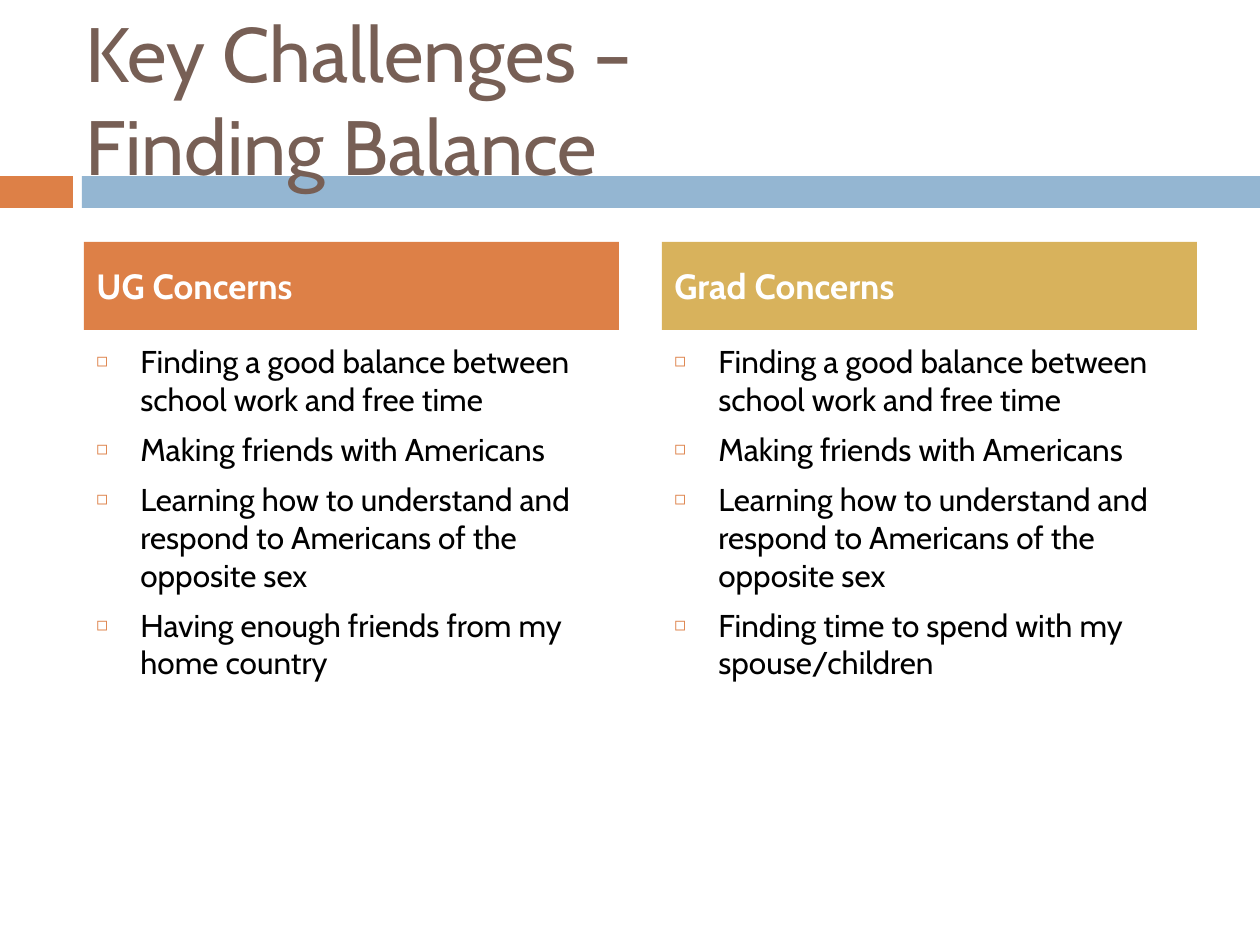
from lxml import etree
from pptx import Presentation
from pptx.dml.color import RGBColor
from pptx.enum.shapes import MSO_SHAPE
from pptx.enum.text import MSO_ANCHOR, PP_ALIGN
from pptx.oxml.ns import qn
from pptx.util import Inches, Pt

RECT = MSO_SHAPE.RECTANGLE
TOP, MIDDLE = MSO_ANCHOR.TOP, MSO_ANCHOR.MIDDLE
LEFT = PP_ALIGN.LEFT

ORANGE = RGBColor(0xDD, 0x80, 0x47)
BLUE = RGBColor(0x94, 0xB6, 0xD2)
GOLD = RGBColor(0xD8, 0xB2, 0x5C)
BROWN = RGBColor(0x77, 0x5F, 0x55)
WHITE = RGBColor(0xFF, 0xFF, 0xFF)
BLACK = RGBColor(0, 0, 0)

FONT = "Cabin"
PX_PER_INCH = 126
INDENT = 44
COLUMN_W = 535

SHARED_CONCERNS = [
    "Finding a good balance between school work and free time",
    "Making friends with Americans",
    "Learning how to understand and respond to Americans of the opposite sex",
]
COLUMNS = [
    (84, "UG Concerns", ORANGE, "Having enough friends from my home country"),
    (662, "Grad Concerns", GOLD, "Finding time to spend with my spouse/children"),
]


def px(n):
    return Inches(n / PX_PER_INCH)


def add_bar(s, x, y, w, h, color):
    sp = s.shapes.add_shape(RECT, px(x), px(y), px(w), px(h))
    sp.shadow.inherit = False
    sp.fill.solid()
    sp.fill.fore_color.rgb = color
    sp.line.fill.background()
    return sp


def add_box(s, x, y, w, h):
    return s.shapes.add_textbox(px(x), px(y), px(w), px(h))


def add_bullet(p):
    pPr = p._p.get_or_add_pPr()
    pPr.set("marL", str(px(INDENT)))
    pPr.set("indent", str(-px(INDENT)))
    color = etree.SubElement(pPr, qn("a:buClr"))
    etree.SubElement(color, qn("a:srgbClr"), val=str(ORANGE))
    etree.SubElement(pPr, qn("a:buSzPct"), val="60000")
    etree.SubElement(pPr, qn("a:buFont"), typeface=FONT)
    etree.SubElement(pPr, qn("a:buChar"), char="◻")


def set_text(sp, paragraphs, size, color, bold=False, anchor=TOP, bullet=False):
    tf = sp.text_frame
    tf.word_wrap = True
    tf.vertical_anchor = anchor
    for i, text in enumerate(paragraphs):
        p = tf.add_paragraph() if i else tf.paragraphs[0]
        p.text = text
        p.alignment = LEFT
        if i:
            p.space_before = Pt(7)
        if bullet:
            add_bullet(p)
        for r in p.runs:
            r.font.name = FONT
            r.font.size = Pt(size)
            r.font.bold = bold
            r.font.color.rgb = color


def add_column(s, x, heading, color, last_concern):
    header = add_bar(s, x, 242, COLUMN_W, 88, color)
    set_text(header, [heading], 20, WHITE, bold=True, anchor=MIDDLE)
    body = add_box(s, x, 336, COLUMN_W, 494)
    set_text(body, SHARED_CONCERNS + [last_concern], 18, BLACK, bullet=True)


def main():
    prs = Presentation()
    prs.slide_width, prs.slide_height = px(1260), px(945)
    s = prs.slides.add_slide(prs.slide_layouts[6])

    add_bar(s, 0, 176, 73, 32, ORANGE)
    add_bar(s, 82, 176, 1178, 32, BLUE)
    title = add_box(s, 73, 38, 1124, 120)
    set_text(title, ["Key Challenges –\vFinding Balance"], 44, BROWN, anchor=MIDDLE)
    for column in COLUMNS:
        add_column(s, *column)

    prs.save("out.pptx")


if __name__ == "__main__":
    main()
